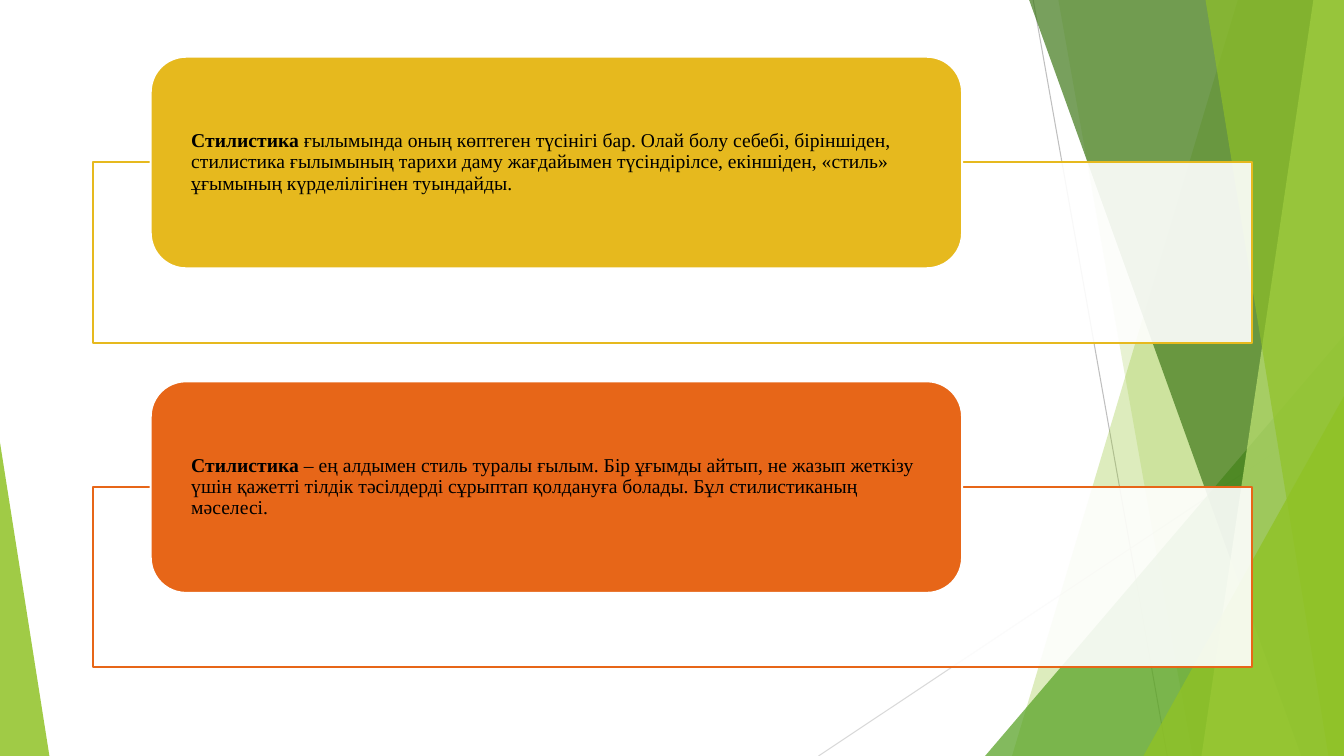
from lxml.etree import SubElement
from pptx import Presentation
from pptx.dml.color import RGBColor
from pptx.enum.shapes import MSO_CONNECTOR, MSO_SHAPE
from pptx.enum.text import MSO_ANCHOR, PP_ALIGN
from pptx.oxml.ns import qn
from pptx.util import Pt

WIDTH, HEIGHT = 960, 540
PANEL_PITCH = 231.84

RAYS = [
    ((738, 0), (833.76, 540), "BFBFBF"),
    ((960, 290.16), (584.64, 540), "D9D9D9"),
]
BACK_BEAMS = [
    (884.16, 722.88, "90C226", 30),
    (756, 851.76, "90C226", 20),
]
FRONT_BEAMS = [
    (735.12, 929.52, "3F7819", 70),
    (938.16, 858.24, "C0E474", 70),
    (861.12, 948.96, "90C226", 65),
]
PANELS = [
    ("E6B91E", "Стилистика",
     " ғылымында оның көптеген түсінігі бар. Олай болу себебі, біріншіден, "
     "стилистика ғылымының тарихи даму жағдайымен түсіндірілсе, екіншіден, "
     "«стиль» ұғымының күрделілігінен туындайды."),
    ("E76618", "Стилистика",
     " – ең алдымен стиль туралы ғылым. Бір ұғымды айтып, не жазып жеткізу "
     "үшін қажетті тілдік тәсілдерді сұрыптап қолдануға болады. "
     "Бұл стилистиканың мәселесі."),
]
FRAME_FORMAT = {
    "margin_left": Pt(21.6), "margin_right": Pt(21.6),
    "margin_top": 0, "margin_bottom": 0,
    "vertical_anchor": MSO_ANCHOR.MIDDLE, "word_wrap": True,
}
PARA_FORMAT = {"alignment": PP_ALIGN.LEFT, "line_spacing": 0.9, "space_after": Pt(4.9)}
FONT_FORMAT = {"name": "Times New Roman", "size": Pt(14)}


def apply_format(target, values):
    for name, value in values.items():
        setattr(target, name, value)


def paint(color, value):
    color.rgb = RGBColor.from_string(value)


def style(shape, fill, opacity=100, outline=None):
    shape.shadow.inherit = False
    shape.fill.solid()
    paint(shape.fill.fore_color, fill)
    if opacity < 100:
        solid = shape.fill._xPr.find(qn("a:solidFill"))
        SubElement(solid[0], qn("a:alpha"), val=str(opacity * 1000))
    if outline:
        paint(shape.line.color, outline)
        shape.line.width = Pt(1.5)
    else:
        shape.line.fill.background()


def add_block(page, kind, box, fill, opacity=100, outline=None):
    shape = page.shapes.add_shape(kind, *map(Pt, box))
    style(shape, fill, opacity, outline)
    return shape


def add_ray(page, start, end, color):
    ray = page.shapes.add_connector(MSO_CONNECTOR.STRAIGHT, *map(Pt, start + end))
    paint(ray.line.color, color)
    ray.line.width = Pt(0.75)
    SubElement(ray._element.spPr, qn("a:effectLst"))


def add_beam(page, box, top_x, bottom_x, fill, opacity):
    left, top, width, height = box
    right, bottom = left + width, top + height
    corners = [(right, top), (right, bottom), (bottom_x, bottom)]
    builder = page.shapes.build_freeform(Pt(top_x), Pt(top), scale=1.0)
    builder.add_line_segments([(Pt(x), Pt(y)) for x, y in corners], close=True)
    style(builder.convert_to_shape(), fill, opacity)


def add_wedge(page, box, apex, fill, opacity):
    wedge = add_block(page, MSO_SHAPE.ISOSCELES_TRIANGLE, box, fill, opacity)
    wedge.adjustments[0] = apex


def draw_backdrop(page, box):
    left, top, width, height = box
    right, bottom = left + width, top + height
    for start, end, color in RAYS:
        add_ray(page, start, end, color)
    for beam in BACK_BEAMS:
        add_beam(page, box, *beam)
    add_wedge(page, (right - 256.32, bottom - 300.24, 256.32, 300.24), 1, "54A021", 72)
    for beam in FRONT_BEAMS:
        add_beam(page, box, *beam)
    add_wedge(page, (right - 143.28, bottom - 257.04, 143.28, 257.04), 1, "90C226", 80)
    add_wedge(page, (left, bottom - 223.92, 35.28, 223.92), 0, "90C226", 85)


def draw_panel(page, box, color, term, text):
    left, top, width, height = box
    add_block(page, MSO_SHAPE.RECTANGLE, (left, top + 75.4, width, height - 75.4),
              "FFFFFF", 90, color)
    card = add_block(page, MSO_SHAPE.ROUNDED_RECTANGLE,
                     (left + 41.4, top, width * 0.7, 151.2), color, outline="FFFFFF")
    apply_format(card.text_frame, FRAME_FORMAT)
    para = card.text_frame.paragraphs[0]
    apply_format(para, PARA_FORMAT)
    for words, bold in ((term, True), (text, False)):
        span = para.add_run()
        span.text = words
        apply_format(span.font, {**FONT_FORMAT, "bold": bold})
        paint(span.font.color, "000000")


def main():
    deck = Presentation()
    apply_format(deck, {"slide_width": Pt(WIDTH), "slide_height": Pt(HEIGHT)})
    page = deck.slides.add_slide(deck.slide_layouts[6])
    draw_backdrop(page, (0, 0, WIDTH, HEIGHT))
    for index, panel in enumerate(PANELS):
        draw_panel(page, (66.24, 40.5 + index * PANEL_PITCH, 828, 204.3), *panel)
    deck.save("out.pptx")


if __name__ == "__main__":
    main()
